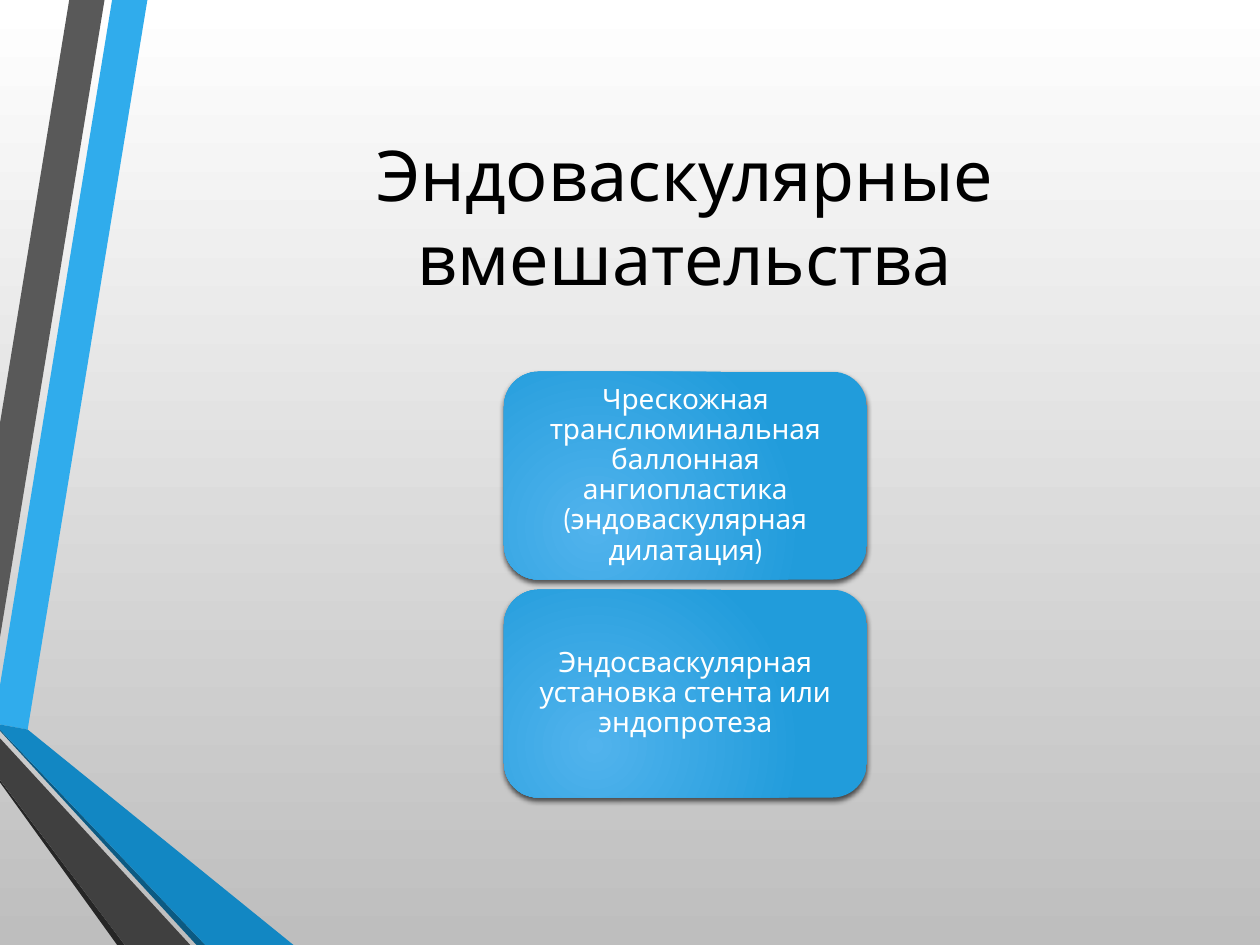
from lxml.etree import SubElement
from pptx import Presentation
from pptx.dml.color import RGBColor
from pptx.enum.shapes import MSO_SHAPE as Shape
from pptx.enum.text import MSO_ANCHOR as Anchor, PP_ALIGN as Align
from pptx.oxml.ns import qn
from pptx.util import Pt

PX = 9144
FONT = "Cabin"
BLACK = RGBColor(0x00, 0x00, 0x00)
WHITE = RGBColor(0xFF, 0xFF, 0xFF)
SILVER = RGBColor(0xBE, 0xBE, 0xBE)
SKY = RGBColor(0x30, 0xAC, 0xEC)
BLUE = RGBColor(0x12, 0x87, 0xC3)
NAVY = RGBColor(0x0C, 0x5A, 0x82)
GRAY = RGBColor(0x59, 0x59, 0x59)
CHARCOAL = RGBColor(0x40, 0x40, 0x40)
SOOT = RGBColor(0x26, 0x26, 0x26)
CARD_LIGHT = RGBColor(0x51, 0xB3, 0xED)
CARD_DARK = RGBColor(0x21, 0x9C, 0xDB)

RIBBONS = [
    (SKY, [(0, 544), (0, 575), (22, 579), (117, 0), (89, 0)]),
    (GRAY, [(83, 0), (55, 0), (0, 336), (0, 506)]),
    (SOOT, [(0, 619), (0, 621), (93, 750), (99, 750)]),
    (NAVY, [(0, 579), (0, 580), (156, 750), (163, 750)]),
    (BLUE, [(0, 579), (163, 750), (233, 750), (22, 579), (0, 575)]),
    (CHARCOAL, [(0, 619), (99, 750), (151, 750), (0, 586)]),
]
TITLE = "Эндоваскулярные вмешательства"
CARDS = [
    "Чрескожная транслюминальная баллонная ангиопластика (эндоваскулярная дилатация)",
    "Эндосваскулярная установка стента или эндопротеза",
]


def emu(*lengths):
    """Turn px lengths into EMU."""
    return [length * PX for length in lengths]


def set_gradient(fill, start, end):
    """Give a fill a two-colour gradient."""
    fill.gradient()
    for stop, color, position in zip(fill.gradient_stops, (start, end), (0, 1)):
        stop.color.rgb = color
        stop.position = position


def write_text(frame, text, size, color, margins):
    """Write one centred paragraph into a text frame and return it."""
    frame.word_wrap = True
    frame.vertical_anchor = Anchor.MIDDLE
    frame.margin_left = frame.margin_right = margins[0] * PX
    frame.margin_top = frame.margin_bottom = margins[1] * PX
    paragraph = frame.paragraphs[0]
    paragraph.alignment = Align.CENTER
    run = paragraph.add_run()
    run.text = text
    run.font.name = FONT
    run.font.size = Pt(size)
    run.font.color.rgb = color
    return paragraph


def add_background(slide):
    """Shade the slide from white at the top to silver at the bottom."""
    fill = slide.background.fill
    set_gradient(fill, WHITE, SILVER)
    fill.gradient_angle = 270


def add_ribbons(slide, left, top):
    """Draw the folded ribbons from the given corner."""
    for color, points in RIBBONS:
        corners = [(left + x, top + y) for x, y in points]
        builder = slide.shapes.build_freeform(*corners[0], scale=PX)
        builder.add_line_segments(corners[1:], close=True)
        shape = builder.convert_to_shape()
        shape.shadow.inherit = False
        shape.fill.solid()
        shape.fill.fore_color.rgb = color
        shape.line.fill.background()


def add_title(slide, left, top, width, height):
    """Place the title in its box."""
    box = slide.shapes.add_textbox(*emu(left, top, width, height))
    write_text(box.text_frame, TITLE, 40, BLACK, (10, 5))


def set_radial(shape):
    """Centre the gradient of a shape towards its lower left."""
    gradient = shape._element.spPr.find(qn("a:gradFill"))
    gradient.remove(gradient.find(qn("a:lin")))
    circle = SubElement(gradient, qn("a:path"), path="circle")
    SubElement(circle, qn("a:fillToRect"), l="50000", t="100000", r="100000", b="50000")


def set_shadow(shape):
    """Put a soft shadow below a shape."""
    shape.shadow.inherit = False
    effects = shape._element.spPr.find(qn("a:effectLst"))
    shadow = SubElement(effects, qn("a:outerShdw"), blurRad=str(Pt(3)), dist=str(Pt(2)),
                        dir="5400000", rotWithShape="0")
    color = SubElement(shadow, qn("a:srgbClr"), val=str(BLACK))
    SubElement(color, qn("a:alpha"), val="64000")


def add_cards(slide, left, top, width, height, gap):
    """Stack the cards evenly in the given box."""
    card_height = (height - gap * (len(CARDS) - 1)) // len(CARDS)
    for index, text in enumerate(CARDS):
        y = top + index * (card_height + gap)
        card = slide.shapes.add_shape(Shape.ROUNDED_RECTANGLE, *emu(left, y, width, card_height))
        set_gradient(card.fill, CARD_LIGHT, CARD_DARK)
        set_radial(card)
        card.line.fill.background()
        set_shadow(card)
        paragraph = write_text(card.text_frame, text, 16, WHITE, (7, 3))
        paragraph.line_spacing = 0.9


def main():
    """Build and save the slide."""
    presentation = Presentation()
    presentation.slide_width, presentation.slide_height = emu(1000, 750)
    slide = presentation.slides.add_slide(presentation.slide_layouts[6])
    add_background(slide)
    add_ribbons(slide, 0, 0)
    add_title(slide, 144, 75, 799, 192)
    add_cards(slide, 400, 295, 288, 338, 8)
    presentation.save("out.pptx")


if __name__ == "__main__":
    main()
